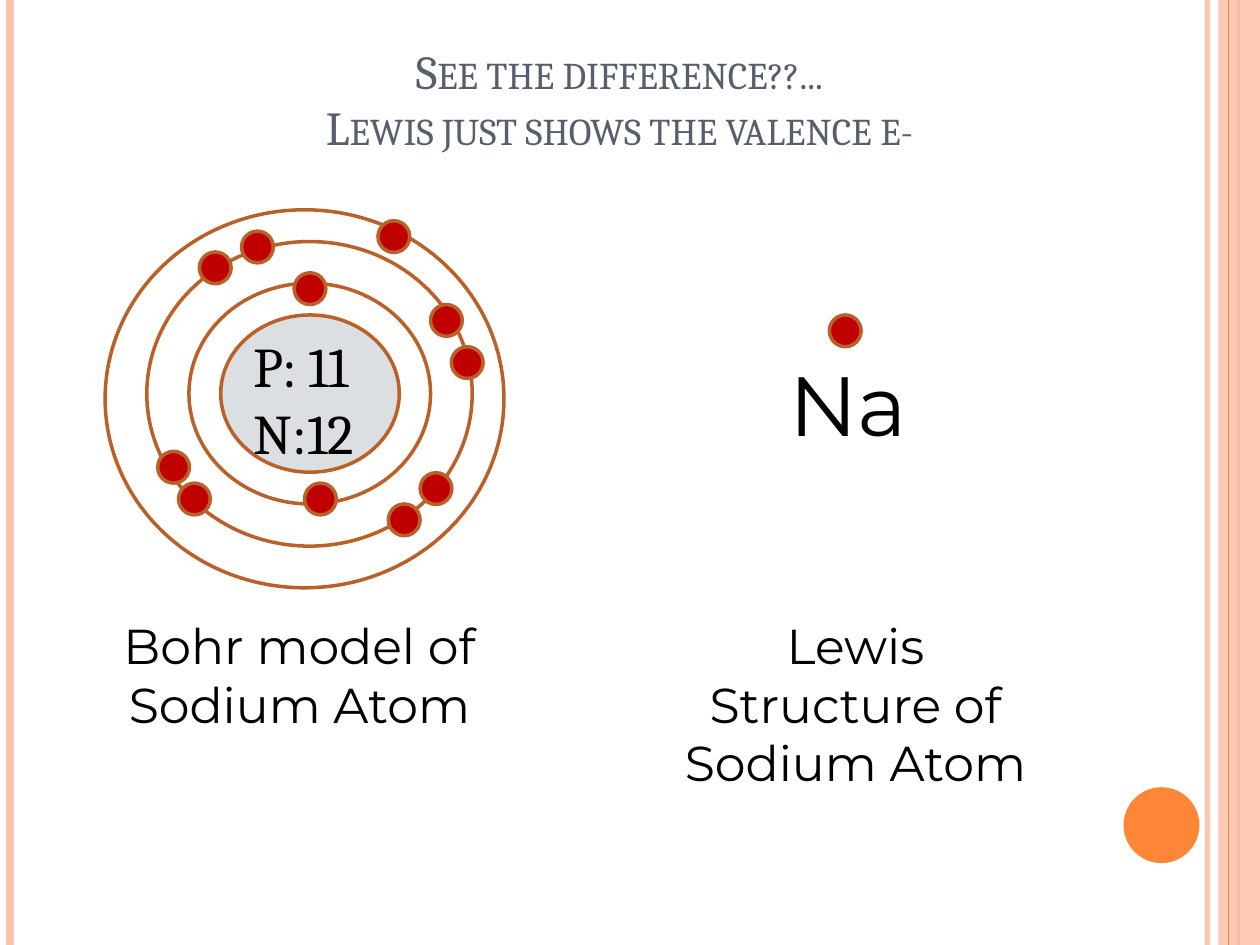
import pptx
import pptx.util
import pptx.dml.color
import pptx.enum.shapes
import pptx.enum.text
import pptx.oxml.ns
import lxml.etree

Cm, Pt = pptx.util.Cm, pptx.util.Pt
Kind = pptx.enum.shapes.MSO_SHAPE
Align = pptx.enum.text.PP_ALIGN
Anchor = pptx.enum.text.MSO_ANCHOR
qn = pptx.oxml.ns.qn

WIDE, HIGH = 25.4, 19.05
PEACH, ORANGE, RUST, RED, GREY = "FEC2AC", "FE8637", "B96128", "C00000", "DBDFE2"
SLATE, BLACK = "575F6D", "000000"
DOT = 0.64

STRIPES = [(24.34, PEACH, 3, 93), (0.2, PEACH, 4.5, 100), (24.97, ORANGE, 1.5, 100)]
EDGE = (24.77, ORANGE, 0.75, 100)
BAND = (24.56, 0, 0.84, HIGH)
BADGE = (22.65, 15.87, 1.53, 1.53)

CORE = (4.45, 6.35, 3.6, 3.17)
RINGS = [(3.81, 5.71, 4.87, 4.45), (2.96, 4.87, 6.56, 6.14), (2.12, 4.23, 8.04, 7.62)]
SHELLS = [
    [(5.93, 5.5), (6.14, 9.74)],
    [(9.1, 6.99), (3.18, 9.1), (8.68, 6.14), (3.6, 9.74),
     (7.83, 10.16), (8.47, 9.53), (4.02, 5.08), (4.87, 4.66)],
    [(7.62, 4.45)],
]
LONE = (16.72, 6.35)

TITLE = ["See the difference??...\vLewis just shows the valence e-"]
COUNTS = ["P: 11", "N:12"]
LABELS = [(2.12, "Bohr model of Sodium Atom"), (13.33, "Lewis Structure of Sodium Atom")]


def tint(code):
    return pptx.dml.color.RGBColor.from_string(code)


def fade(part, rate):
    if rate < 100:
        clr = part.find(".//" + qn("a:srgbClr"))
        lxml.etree.SubElement(clr, qn("a:alpha")).set("val", str(rate * 1000))


def stripe(slide, x, code, size, rate):
    line = slide.shapes.add_connector(
        pptx.enum.shapes.MSO_CONNECTOR.STRAIGHT, Cm(x), Cm(0), Cm(x), Cm(HIGH))
    line.line.color.rgb = tint(code)
    line.line.width = Pt(size)
    props = line._element.spPr
    fade(props, rate)
    lxml.etree.SubElement(props, qn("a:effectLst"))


def shape(slide, box, fill=None, edge=None, kind=Kind.OVAL):
    item = slide.shapes.add_shape(kind, *map(Cm, box))
    item.shadow.inherit = False
    if fill:
        item.fill.solid()
        item.fill.fore_color.rgb = tint(fill)
    else:
        item.fill.background()
    if edge:
        item.line.color.rgb = tint(edge)
        item.line.width = Pt(2)
    else:
        item.line.fill.background()
    return item


def text(slide, box, lines, size, font, code=BLACK, align=Align.LEFT,
         anchor=Anchor.TOP, small=False):
    frame = slide.shapes.add_textbox(*map(Cm, box)).text_frame
    frame.word_wrap = True
    frame.vertical_anchor = anchor
    for i, line in enumerate(lines):
        para = frame.add_paragraph() if i else frame.paragraphs[0]
        para.text = line
        para.alignment = align
        para.font.size = Pt(size)
        para.font.name = font
        para.font.color.rgb = tint(code)
        if small:
            for run in para.runs:
                run._r.get_or_add_rPr().set("cap", "small")


def build():
    deck = pptx.Presentation()
    deck.slide_width, deck.slide_height = Cm(WIDE), Cm(HIGH)
    slide = deck.slides.add_slide(deck.slide_layouts[6])

    for row in STRIPES:
        stripe(slide, *row)
    band = shape(slide, BAND, PEACH, kind=Kind.RECTANGLE)
    fade(band._element.spPr, 87)
    stripe(slide, *EDGE)
    shape(slide, BADGE, ORANGE)

    text(slide, (2.12, 0.85, 20.74, 2.41), TITLE, 27, "Cambria", SLATE,
         Align.CENTER, Anchor.BOTTOM, True)

    shape(slide, CORE, GREY, RUST)
    text(slide, (4.87, 6.56, 3.6, 3), COUNTS, 32, "Cambria")
    for ring in RINGS:
        shape(slide, ring, edge=RUST)
    for x, y in sum(SHELLS, []) + [LONE]:
        shape(slide, (x, y, DOT, DOT), RED, RUST)

    for x, label in LABELS:
        text(slide, (x, 12.28, 7.83, 3.84), [label], 28, "Montserrat", align=Align.CENTER)
    text(slide, (15.66, 6.99, 3.18, 2.31), ["Na"], 48, "Montserrat")

    deck.save("out.pptx")


if __name__ == "__main__":
    build()
